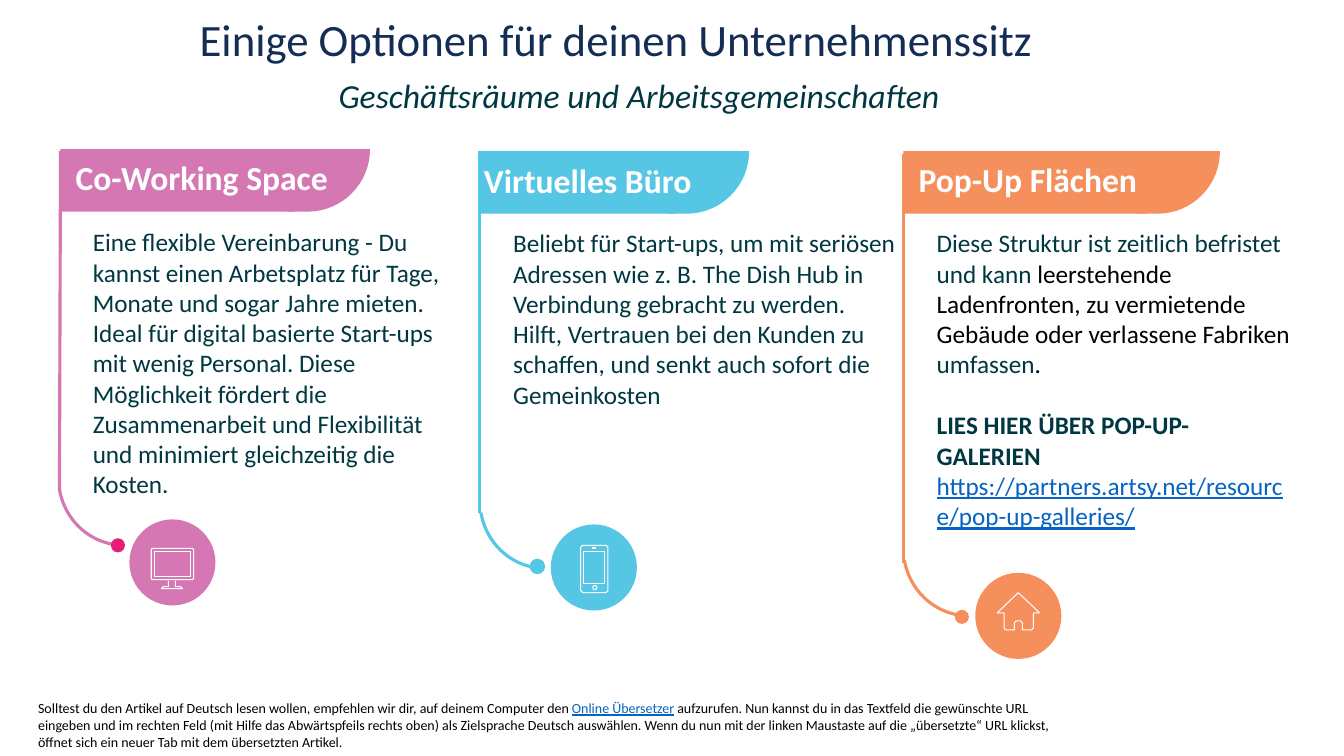
from dataclasses import dataclass
from math import cos, pi, sin

from lxml import etree
from pptx import Presentation
from pptx.dml.color import RGBColor
from pptx.enum.shapes import MSO_CONNECTOR, MSO_SHAPE
from pptx.enum.text import MSO_ANCHOR, MSO_AUTO_SIZE, PP_ALIGN
from pptx.oxml.ns import qn
from pptx.util import Inches, Pt

RECT, OVAL, ARC = MSO_SHAPE.RECTANGLE, MSO_SHAPE.OVAL, MSO_SHAPE.ARC
STRAIGHT = MSO_CONNECTOR.STRAIGHT
TOP, BOTTOM = MSO_ANCHOR.TOP, MSO_ANCHOR.BOTTOM
LEFT = PP_ALIGN.LEFT
GROW, FIXED = MSO_AUTO_SIZE.SHAPE_TO_FIT_TEXT, MSO_AUTO_SIZE.NONE

Point = tuple[float, float]
Box = tuple[float, float, float, float]


@dataclass(frozen=True)
class Theme:
    font: str = "Calibri"
    navy: str = "142D55"
    teal: str = "003841"
    black: str = "000000"
    white: str = "FFFFFF"
    link: str = "0563C1"
    pink: str = "D477B3"
    rose: str = "E61E77"
    blue: str = "56C6E5"
    orange: str = "F5905D"
    title: int = 32
    head: int = 24
    body: int = 18
    note: int = 10


THEME = Theme()


@dataclass(frozen=True)
class Run:
    text: str
    color: str = THEME.teal
    bold: bool = False
    italic: bool = False
    under: bool = False


@dataclass(frozen=True)
class Path:
    points: list[Point]
    closed: bool = True


@dataclass(frozen=True)
class Card:
    head: str
    head_at: Point
    body: list[list[Run]]
    body_at: Box
    color: str
    flag: Box
    tail_x: float
    stem: Box
    arc_at: Point
    dot_at: Point
    dot_color: str
    dot_line: float
    disc_at: Point
    icon: list[list[Path]]


def rgb(code: str) -> RGBColor:
    return RGBColor.from_string(code)


def style(shape, fill: str | None, line: str | None = None, width: float = 1) -> None:
    shape.shadow.inherit = False
    if fill:
        shape.fill.solid()
        shape.fill.fore_color.rgb = rgb(fill)
    else:
        shape.fill.background()
    if line:
        shape.line.color.rgb = rgb(line)
        shape.line.width = Pt(width)
    else:
        shape.line.fill.background()


def add_shape(slide, kind, box: Box, fill: str | None, line: str | None = None, width: float = 1):
    shape = slide.shapes.add_shape(kind, *map(Inches, box))
    style(shape, fill, line, width)
    return shape


def add_paths(slide, paths: list[Path], fill: str | None, line: str | None = None) -> None:
    """Draw one freeform made of several outlines, given in inches."""
    pen = None
    for path in paths:
        start, *rest = [(Inches(x), Inches(y)) for x, y in path.points]
        if pen is None:
            pen = slide.shapes.build_freeform(*start)
        else:
            pen.move_to(*start)
        pen.add_line_segments(rest, close=path.closed)
    style(pen.convert_to_shape(), fill, line, 0.75)


def fill_text(frame, paras: list[list[Run]], size: int, gap: float = 0) -> None:
    frame.word_wrap = True
    for i, runs in enumerate(paras):
        para = frame.add_paragraph() if i else frame.paragraphs[0]
        para.alignment = LEFT
        if i:
            para.space_before = Pt(gap)
        for item in runs:
            run = para.add_run()
            run.text = item.text
            font = run.font
            font.name, font.size = THEME.font, Pt(size)
            font.bold, font.italic, font.underline = item.bold, item.italic, item.under
            font.color.rgb = rgb(item.color)


def add_text(slide, box: Box, paras: list[list[Run]], size: int, side: float = 0.1, anchor=TOP):
    frame = slide.shapes.add_textbox(*map(Inches, box)).text_frame
    frame.margin_left = frame.margin_right = Inches(side)
    frame.vertical_anchor = anchor
    fill_text(frame, paras, size, gap=22)
    frame.auto_size = GROW
    return frame


def bend(x: float, y: float, rx: float, ry: float, turn: float, steps: int = 16) -> list[Point]:
    """Points on an ellipse, clockwise from its right end."""
    angles = [turn * i / steps for i in range(steps + 1)]
    return [(x + rx * cos(a), y + ry * sin(a)) for a in angles]


def frame_path(x: float, y: float, w: float, h: float, cut: float = 0) -> Path:
    """A rectangle with its corners cut off."""
    r, b = x + w, y + h
    if not cut:
        return Path([(x, y), (r, y), (r, b), (x, b)])
    return Path([(x + cut, y), (r - cut, y), (r, y + cut), (r, b - cut),
                 (r - cut, b), (x + cut, b), (x, b - cut), (x, y + cut)])


def draw_card(slide, card: Card) -> None:
    x, y, w, h = card.flag
    curve = bend(card.tail_x + 0.2, y, h, h, pi / 2)
    add_paths(slide, [Path([(card.tail_x, y), *curve, (card.tail_x, y + h)])], card.color)
    add_shape(slide, RECT, card.flag, card.color)
    add_text(slide, (*card.head_at, 3.41, 0.5), [[Run(card.head, THEME.white, bold=True)]],
             THEME.head, 0, BOTTOM)
    stem = slide.shapes.add_connector(STRAIGHT, *map(Inches, card.stem))
    stem.line.color.rgb = rgb(card.color)
    stem.line.width = Pt(2.25)
    etree.SubElement(stem._element.spPr, qn("a:effectLst"))
    arc = add_shape(slide, ARC, (*card.arc_at, 1.31, 1.35), None, card.color, 2.25)
    arc.rotation = 186.2
    arc.adjustments[0], arc.adjustments[1] = 162, 205.93
    add_shape(slide, OVAL, (*card.dot_at, 0.14, 0.14), card.dot_color,
              card.dot_color if card.dot_line else None, card.dot_line)
    add_text(slide, card.body_at, card.body, THEME.body, 0)
    add_shape(slide, OVAL, (*card.disc_at, 0.84, 0.84), card.color, card.color)
    for paths in card.icon:
        add_paths(slide, paths, None, THEME.white)


STAND = Path([(1.67, 5.76), (1.67, 5.82), (1.62, 5.82), (1.6, 5.84), (1.81, 5.84),
              (1.79, 5.82), (1.74, 5.82), (1.74, 5.76)], closed=False)
SCREEN = [frame_path(1.5, 5.44, 0.42, 0.31, 0.01), frame_path(1.53, 5.47, 0.36, 0.25)]
PHONE = [frame_path(5.76, 5.41, 0.27, 0.47, 0.02), frame_path(5.88, 5.43, 0.03, 0.01),
         Path(bend(5.9, 5.83, 0.02, 0.02, 2 * pi)), frame_path(5.79, 5.47, 0.21, 0.32)]
HOUSE = Path([(10.1, 5.88), (9.89, 6.08), (9.96, 6.08), (9.96, 6.23), (9.97, 6.25),
              (10.06, 6.25), (10.06, 6.18), (10.08, 6.16), (10.12, 6.16), (10.14, 6.18),
              (10.14, 6.25), (10.23, 6.25), (10.25, 6.23), (10.25, 6.08), (10.31, 6.08)])

CARDS = [
    Card("Co-Working Space", (0.75, 1.51), [[Run(
        "Eine flexible Vereinbarung - Du kannst einen Arbetsplatz für Tage, Monate und sogar "
        "Jahre mieten. Ideal für digital basierte Start-ups mit wenig Personal. Diese "
        "Möglichkeit fördert die Zusammenarbeit und Flexibilität und minimiert gleichzeitig "
        "die Kosten.")]], (0.92, 2.2, 3.51, 2.83), THEME.pink, (0.6, 1.48, 2.32, 0.62), 2.85,
        (0.6, 1.5, 0.59, 4.86), (0.58, 4.06), (1.1, 5.34), THEME.rose, 0, (1.29, 5.16),
        [[STAND], SCREEN]),
    Card("Virtuelles Büro", (4.8, 1.54), [[Run(
        "Beliebt für Start-ups, um mit seriösen Adressen wie z. B. The Dish Hub in Verbindung "
        "gebracht zu werden. Hilft, Vertrauen bei den Kunden zu schaffen, und senkt auch "
        "sofort die Gemeinkosten")]], (5.09, 2.21, 3.8, 1.92), THEME.blue,
        (4.76, 1.5, 1.94, 0.62), 6.61, (4.76, 1.5, 4.76, 5.09), (4.76, 4.29), (5.26, 5.55),
        THEME.blue, 1, (5.47, 5.21), [PHONE]),
    Card("Pop-Up Flächen", (9.11, 1.53), [
        [Run("Diese Struktur ist zeitlich befristet und kann "),
         Run("leerstehende Ladenfronten, zu vermietende Gebäude oder verlassene Fabriken ",
             THEME.black), Run("umfassen"), Run(".", THEME.black)],
        [Run("LIES HIER ÜBER POP-UP-GALERIEN ", bold=True),
         Run("https://partners.artsy.net/resource/pop-up-galleries/", THEME.link, under=True)],
        ], (9.29, 2.21, 3.53, 3.13), THEME.orange, (8.96, 1.5, 2.41, 0.62), 11.28,
        (8.96, 1.53, 8.96, 5.59), (8.96, 4.76), (9.47, 6.05), THEME.orange, 0, (9.68, 5.69),
        [[HOUSE]]),
]
NOTE = [
    Run("Solltest du den Artikel auf Deutsch lesen wollen, empfehlen wir dir, auf deinem "
        "Computer den ", THEME.black),
    Run("Online Übersetzer", THEME.link, under=True),
    Run(" aufzurufen. Nun kannst du in das Textfeld die gewünschte URL eingeben und im rechten "
        "Feld (mit Hilfe das Abwärtspfeils rechts oben) als Zielsprache Deutsch auswählen. Wenn "
        "du nun mit der linken Maustaste auf die „übersetzte“ URL klickst, öffnet sich ein "
        "neuer Tab mit dem übersetzten Artikel.", THEME.black),
]


def main() -> None:
    deck = Presentation()
    deck.slide_width, deck.slide_height = Inches(13.33), Inches(7.5)
    slide = deck.slides.add_slide(deck.slide_layouts[5])
    title = slide.shapes.title
    title.left, title.top, title.width, title.height = map(Inches, (1.88, 0.13, 9.62, 0.76))
    frame = title.text_frame
    frame.vertical_anchor, frame.auto_size = TOP, FIXED
    fill_text(frame, [[Run("Einige Optionen für deinen Unternehmenssitz", THEME.navy)]],
              THEME.title)
    frame.paragraphs[0].line_spacing = 0.9
    lead = add_text(slide, (3.26, 0.74, 10.07, 0.62), [[
        Run("Geschäftsräume und Arbeitsgemeinschaften", italic=True)]], THEME.head)
    lead.auto_size = FIXED
    lead.paragraphs[0].line_spacing = 0.9
    for card in CARDS:
        draw_card(slide, card)
    add_text(slide, (0.28, 6.89, 10.27, 0.61), [NOTE], THEME.note)
    deck.save("out.pptx")


if __name__ == "__main__":
    main()
